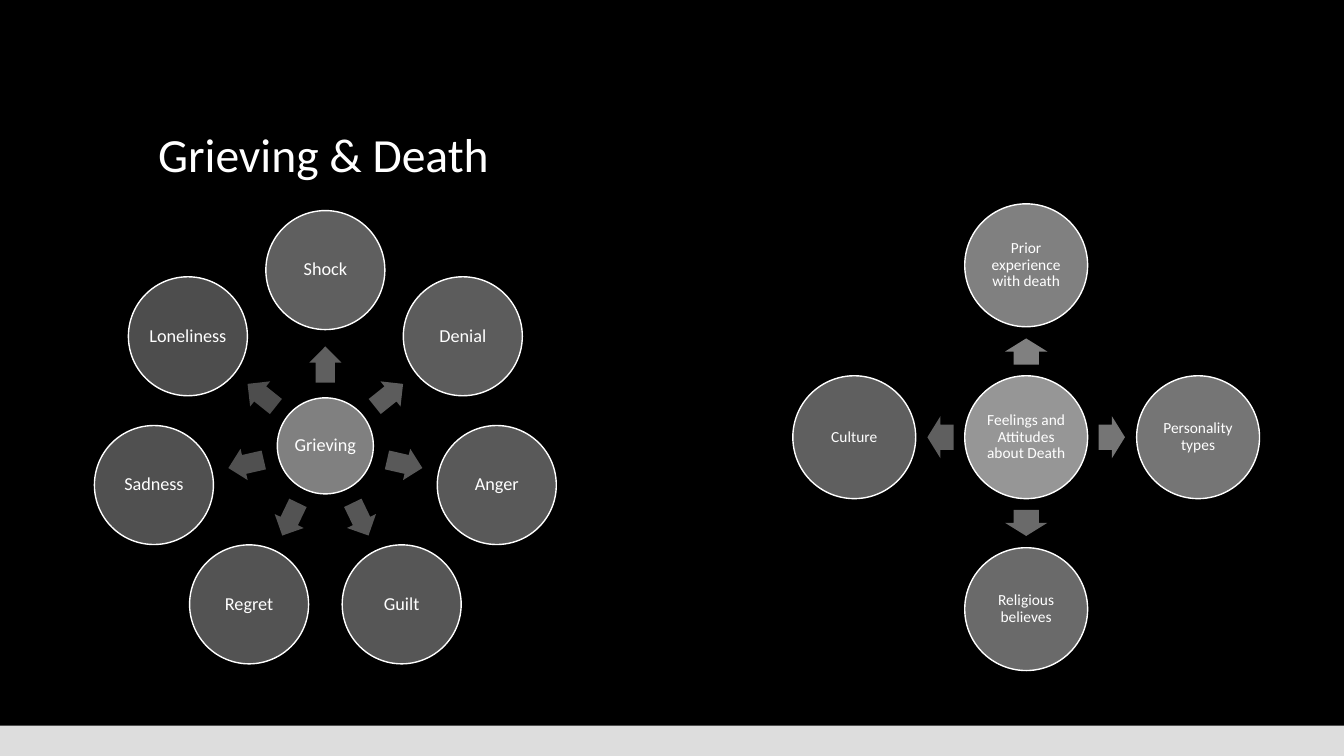
import math
from dataclasses import dataclass

import pptx
import pptx.dml.color
import pptx.enum.shapes
import pptx.enum.text
import pptx.util

Pt = pptx.util.Pt
MSO_SHAPE = pptx.enum.shapes.MSO_SHAPE
PP_ALIGN = pptx.enum.text.PP_ALIGN
MSO_ANCHOR = pptx.enum.text.MSO_ANCHOR

FONT = "Calibri"
COLORS = {
    "background": "000000",
    "text": "FFFFFF",
    "outline": "FFFFFF",
    "footer": "DDDDDD",
    "grieving": "808080",
    "attitudes": "969696",
}


@dataclass
class RadialStyle:
    hub_size: float
    node_size: float
    orbit: float
    arrow_orbit: float
    arrow_length: float
    arrow_width: float
    text_size: float
    first_shade: int
    shade_step: int


GRIEVING_STYLE = RadialStyle(68.6, 85, 125.6, 58.1, 25.9, 23, 13, 0x5F, 3)
ATTITUDES_STYLE = RadialStyle(87.8, 87.8, 122.8, 61.2, 18.7, 30.2, 11, 0x80, 11)


def rgb(hex_color):
    return pptx.dml.color.RGBColor.from_string(hex_color)


def add_filled(shapes, kind, box, fill):
    shape = shapes.add_shape(kind, *(Pt(length) for length in box))
    shape.shadow.inherit = False
    shape.fill.solid()
    shape.fill.fore_color.rgb = rgb(fill)
    shape.line.fill.background()
    return shape


def write(frame, text, size, align, anchor):
    frame.word_wrap = True
    frame.auto_size = pptx.enum.text.MSO_AUTO_SIZE.NONE
    frame.vertical_anchor = anchor
    paragraph = frame.paragraphs[0]
    paragraph.alignment = align
    paragraph.line_spacing = 0.9
    run = paragraph.add_run()
    run.text = text
    run.font.name = FONT
    run.font.size = Pt(size)
    run.font.color.rgb = rgb(COLORS["text"])


def centered(x, y, width, height):
    return x - width / 2, y - height / 2, width, height


def add_circle(shapes, x, y, diameter, fill, text, text_size):
    circle = add_filled(shapes, MSO_SHAPE.OVAL, centered(x, y, diameter, diameter), fill)
    circle.line.color.rgb = rgb(COLORS["outline"])
    circle.line.width = Pt(1)
    frame = circle.text_frame
    frame.margin_left = frame.margin_right = Pt(1.44)
    frame.margin_top = frame.margin_bottom = Pt(1.44)
    write(frame, text, text_size, PP_ALIGN.CENTER, MSO_ANCHOR.MIDDLE)


def add_radial(slide, center, hub, hub_fill, topics, style):
    shapes = slide.shapes.add_group_shape().shapes
    x, y = center
    add_circle(shapes, x, y, style.hub_size, hub_fill, hub, style.text_size)
    for index, topic in enumerate(topics):
        degrees = 360 * index / len(topics) - 90
        dx, dy = math.cos(math.radians(degrees)), math.sin(math.radians(degrees))
        fill = f"{style.first_shade - index * style.shade_step:02X}" * 3
        arrow_box = centered(x + style.arrow_orbit * dx, y + style.arrow_orbit * dy,
                             style.arrow_length, style.arrow_width)
        arrow = add_filled(shapes, MSO_SHAPE.RIGHT_ARROW, arrow_box, fill)
        arrow.adjustments[0] = 0.6
        arrow.adjustments[1] = 0.5
        arrow.rotation = degrees % 360
        add_circle(shapes, x + style.orbit * dx, y + style.orbit * dy,
                   style.node_size, fill, topic, style.text_size)


def add_title(slide, box, text):
    title = slide.shapes.title
    title.left, title.top, title.width, title.height = (Pt(length) for length in box)
    write(title.text_frame, text, 34, PP_ALIGN.LEFT, MSO_ANCHOR.BOTTOM)


def build_grief_slide(presentation):
    slide = presentation.slides.add_slide(presentation.slide_layouts[5])
    slide.background.fill.solid()
    slide.background.fill.fore_color.rgb = rgb(COLORS["background"])
    add_filled(slide.shapes, MSO_SHAPE.RECTANGLE, (0, 518.4, 960, 21.6), COLORS["footer"])
    add_title(slide, (105.8, 36.7, 748.8, 97.2), "Grieving & Death")
    add_radial(slide, (232.4, 318.5), "Grieving", COLORS["grieving"],
               ["Shock", "Denial", "Anger", "Guilt", "Regret", "Sadness", "Loneliness"],
               GRIEVING_STYLE)
    add_radial(slide, (733, 312.3), "Feelings and Attitudes about Death", COLORS["attitudes"],
               ["Prior experience with death", "Personality types", "Religious believes", "Culture"],
               ATTITUDES_STYLE)


def main():
    presentation = pptx.Presentation()
    presentation.slide_width = Pt(960)
    presentation.slide_height = Pt(540)
    build_grief_slide(presentation)
    presentation.save("out.pptx")


if __name__ == "__main__":
    main()
